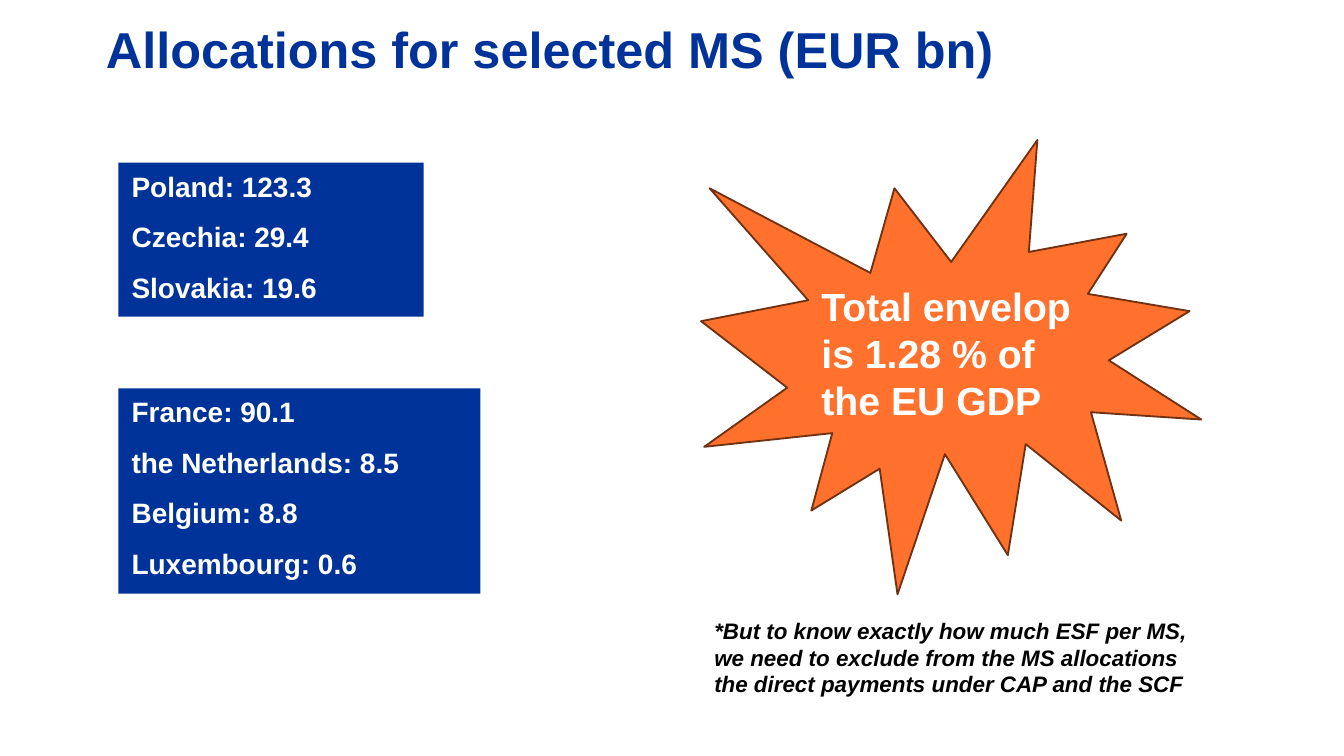
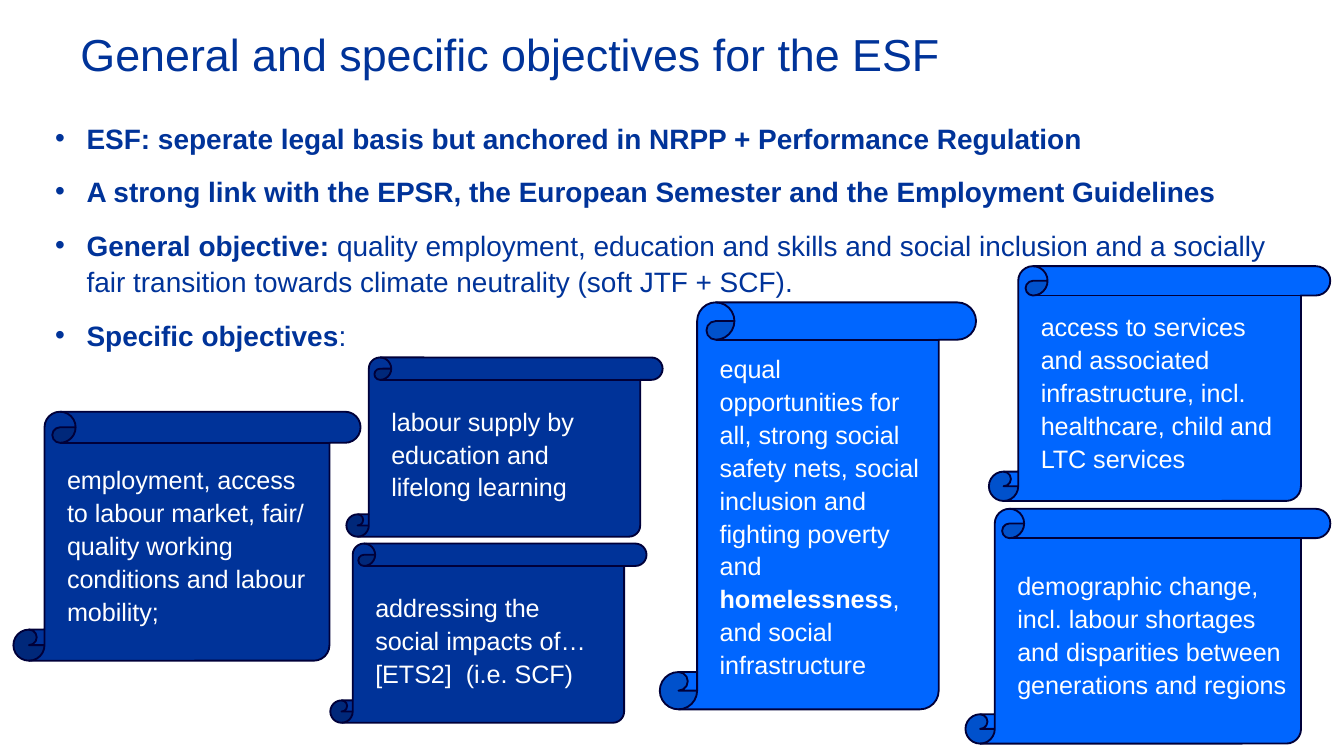
from pptx import Presentation as Deck
from pptx.dml.color import RGBColor as Rgb
from pptx.enum.shapes import MSO_SHAPE as Form
from pptx.enum.text import MSO_ANCHOR as Hold, PP_ALIGN as Align
from pptx.oxml.ns import qn
from pptx.util import Pt
from lxml.etree import SubElement as Child

HUES = {
    "navy": "003399",
    "sky": "0066FF",
    "edge": "000039",
    "flame": "FF712C",
    "rust": "703213",
    "white": "FFFFFF",
    "black": "000000",
}
FACE = "Arial"
AIR = {"space_before": Pt(4.5), "space_after": Pt(4.5)}
LOOSE = {**AIR, "line_spacing": 1.09}


def hue(name):
    return Rgb.from_string(HUES[name])


def put(thing, vals):
    for key, val in vals.items():
        setattr(thing, key, val)


def draw(slide, form, box, fill=None, line=None):
    shape = slide.shapes.add_shape(form, *map(Pt, box))
    shape.shadow.inherit = False
    if fill:
        shape.fill.solid()
        shape.fill.fore_color.rgb = hue(fill)
    else:
        shape.fill.background()
    if line:
        shape.line.color.rgb = hue(line)
        shape.line.width = Pt(1)
    else:
        shape.line.fill.background()
    return shape


def indent(para, left, dot=None):
    props = para._p.get_or_add_pPr()
    props.set("marL", str(Pt(left)))
    if dot:
        props.set("indent", str(-Pt(left)))
        tint = Child(props, qn("a:buClr"))
        Child(tint, qn("a:srgbClr"), val=HUES[dot])
        Child(props, qn("a:buFont"), typeface=FACE)
        Child(props, qn("a:buChar"), char="•")


def write(shape, paras, size, ink, hold=Hold.TOP, style=None, left=0, dot=None, bold=False, slant=False):
    frame = shape.text_frame
    put(frame, {"word_wrap": True, "vertical_anchor": hold})
    for num, runs in enumerate(paras):
        para = frame.paragraphs[0] if num == 0 else frame.add_paragraph()
        put(para, {"alignment": Align.LEFT, **(style or {})})
        if num == 0:
            para.space_before = Pt(0)
        if left:
            indent(para, left, dot)
        for text, heavy in [(runs, bold)] if isinstance(runs, str) else runs:
            run = para.add_run()
            run.text = text
            put(run.font, {"name": FACE, "size": Pt(size), "bold": heavy, "italic": slant})
            run.font.color.rgb = hue(ink)


def title(slide, box, text, size, bold=False):
    shape = draw(slide, Form.RECTANGLE, box, "white")
    write(shape, [text], size, "navy", Hold.MIDDLE, {"line_spacing": 0.9}, bold=bold)


def shares(slide, box, rows):
    x, y, wide = box
    shape = draw(slide, Form.RECTANGLE, (x, y, wide, 27.5 * len(rows)), "navy")
    write(shape, [f"{land}: {sum_}" for land, sum_ in rows], 15, "white", style=AIR, bold=True)


def burst(slide, box, text, note):
    x, y, wide, high = box
    star = draw(slide, Form.EXPLOSION1, box, "flame", "rust")
    write(star, [text], 21, "white", Hold.MIDDLE, AIR, bold=True)
    foot = slide.shapes.add_textbox(*map(Pt, (x, y + high + 8.5, wide + 6, 51)))
    write(foot, [note], 12, "black", bold=True, slant=True)


def points(slide, box, paras):
    shape = slide.shapes.add_textbox(*map(Pt, box))
    sides = ("left", "right", "top", "bottom")
    put(shape.text_frame, {f"margin_{side}": Pt(8.6) for side in sides})
    write(shape, paras, 15, "navy", style=LOOSE, left=16.9, dot="navy")


def scrolls(slide, box, parts):
    x, y = box
    for (dx, dy, wide, high), fill, curl, runs in parts:
        shape = draw(slide, Form.VERTICAL_SCROLL, (x + dx, y + dy, wide, high), fill, "edge")
        shape.adjustments[0] = curl
        write(shape, [runs], 13.5, "white", Hold.MIDDLE, LOOSE, left=5)


def funds(slide):
    shares(slide, (63.4, 87.2, 163.6), [("Poland", 123.3), ("Czechia", 29.4), ("Slovakia", 19.6)])
    shares(slide, (63.4, 208, 194), [
        ("France", 90.1),
        ("the Netherlands", 8.5),
        ("Belgium", 8.8),
        ("Luxembourg", 0.6),
    ])
    title(slide, (49.7, 4, 620.6, 48), "Allocations for selected MS (EUR bn)", 27, True)
    burst(
        slide,
        (375.6, 75, 268, 243.4),
        "Total envelop is 1.28 % of the EU GDP",
        "*But to know exactly how much ESF per MS, we need to exclude from the MS "
        "allocations the direct payments under CAP and the SCF",
    )


def goals(slide):
    title(slide, (36, 6.5, 648.7, 48), "General and specific objectives for the ESF", 24)
    points(slide, (20.9, 54.7, 674, 110), [
        [("ESF: seperate legal basis but anchored in NRPP + Performance Regulation", True)],
        [("A strong link with the EPSR, the European Semester and the Employment Guidelines", True)],
        [
            ("General objective:", True),
            (" quality employment, education and skills and social inclusion and a socially "
             "fair transition towards climate neutrality (soft JTF + SCF).", False),
        ],
        [("Specific objectives", True), (":", False)],
    ])
    scrolls(slide, (7.2, 142.6), [
        ((0, 78, 186, 133.4), "navy", 0.125,
         "employment, access to labour market, fair/ quality working conditions and labour mobility;"),
        ((178.4, 48.9, 169.4, 96), "navy", 0.125,
         "labour supply by education and lifelong learning"),
        ((346.3, 19.4, 169.4, 218), "sky", 0.118, [
            ("equal opportunities for all, strong social safety nets, social inclusion and "
             "fighting poverty and ", False),
            ("homelessness", True),
            (", and social infrastructure", False),
        ]),
        ((522.6, 0, 182.9, 125.8), "sky", 0.125,
         "access to services and associated infrastructure, incl. healthcare, child and LTC services"),
        ((510, 130, 195.5, 125.8), "sky", 0.125,
         "demographic change, incl. labour shortages and disparities between generations and regions"),
        ((169.8, 148.6, 169.4, 96), "navy", 0.125,
         "addressing the social impacts of… [ETS2]  (i.e. SCF)"),
    ])


def main():
    deck = Deck()
    put(deck, {"slide_width": Pt(720), "slide_height": Pt(405)})
    for fill in (funds, goals):
        fill(deck.slides.add_slide(deck.slide_layouts[6]))
    deck.save("out.pptx")


if __name__ == "__main__":
    main()
